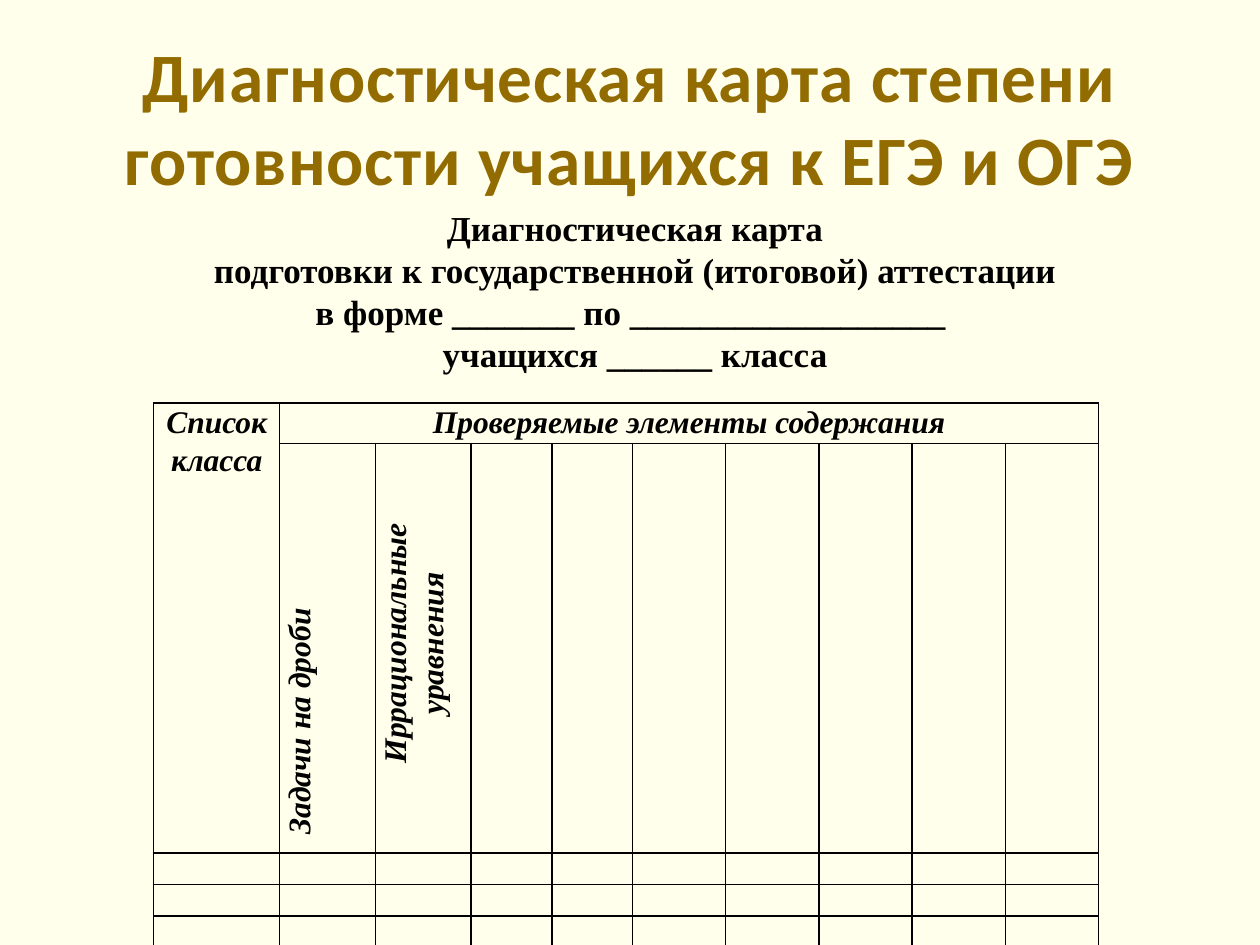
from dataclasses import dataclass

from lxml.etree import SubElement as Sub
from pptx import Presentation
from pptx.dml.color import RGBColor as Rgb
from pptx.enum.text import MSO_ANCHOR as Anchor, PP_ALIGN as Align
from pptx.oxml.ns import qn
from pptx.util import Inches, Pt

HUES = {"back": "FFFFEB", "title": "926C00", "ink": "000000"}
SERIF = "Times New Roman"
COLS = [1, 0.76, 0.76, 0.64, 0.64] + [0.74] * 5
ROWS = [0.32, 3.25] + [0.25] * 3


@dataclass
class Head:
    row: int
    col: int
    text: str
    align: Align = Align.CENTER
    vert: bool = False


HEADS = [
    Head(0, 0, "Список класса"),
    Head(0, 1, "Проверяемые элементы содержания"),
    Head(1, 1, "Задачи на дроби", Align.LEFT, True),
    Head(1, 2, "Иррациональные уравнения", vert=True),
]


def write(frame, text: str, *, size: float, face: str = SERIF,
          hue: str = "ink", italic: bool = False, align: Align = Align.CENTER,
          lead: float = 1.0, track: int = 0, left: float = 0) -> None:
    frame.word_wrap = True
    for i, line in enumerate(text.split("\n")):
        para = frame.paragraphs[0] if i == 0 else frame.add_paragraph()
        para.alignment = align
        para.line_spacing = lead
        if left:
            para._p.get_or_add_pPr().set("marL", str(Inches(left)))
        run = para.add_run()
        run.text = line
        font = run.font
        font.name, font.size = face, Pt(size)
        font.bold, font.italic = True, italic
        font.color.rgb = Rgb.from_string(HUES[hue])
        if track:
            run._r.get_or_add_rPr().set("spc", str(track))


def add_text(slide, box: tuple, text: str, anchor: Anchor, **form) -> None:
    frame = slide.shapes.add_textbox(*map(Inches, box)).text_frame
    frame.vertical_anchor = anchor
    write(frame, text, **form)


def style(cell) -> None:
    cell.margin_left = cell.margin_right = Inches(0.07)
    cell.margin_top = cell.margin_bottom = 0
    cell.text_frame.paragraphs[0].font.size = Pt(12)
    props = cell._tc.get_or_add_tcPr()
    for side in ("lnL", "lnR", "lnT", "lnB"):
        edge = Sub(props, qn(f"a:{side}"), w=str(Pt(1)))
        fill = Sub(edge, qn("a:solidFill"))
        Sub(fill, qn("a:srgbClr"), val=HUES["ink"])
    cell.fill.background()


def add_grid(slide) -> None:
    size = map(Inches, (1.22, 3.2, sum(COLS), sum(ROWS)))
    grid = slide.shapes.add_table(len(ROWS), len(COLS), *size).table
    grid.first_row = grid.horz_banding = False
    for col, width in zip(grid.columns, COLS):
        col.width = Inches(width)
    for row, height in zip(grid.rows, ROWS):
        row.height = Inches(height)
        for cell in row.cells:
            style(cell)
    grid.cell(0, 0).merge(grid.cell(1, 0))
    grid.cell(0, 1).merge(grid.cell(0, len(COLS) - 1))
    for head in HEADS:
        cell = grid.cell(head.row, head.col)
        if head.vert:
            cell._tc.get_or_add_tcPr().set("vert", "vert270")
        write(cell.text_frame, head.text, size=18, italic=True, lead=1.07,
              align=head.align, left=0.08 if head.vert else 0)


def main() -> None:
    deck = Presentation()
    deck.slide_width, deck.slide_height = Inches(10), Inches(7.5)
    slide = deck.slides.add_slide(deck.slide_layouts[6])
    fill = slide.background.fill
    fill.solid()
    fill.fore_color.rgb = Rgb.from_string(HUES["back"])
    add_text(slide, (0.5, 0.3, 9, 1.25),
             "Диагностическая карта степени готовности учащихся к ЕГЭ и ОГЭ",
             Anchor.MIDDLE, size=39.6, face="Calibri", hue="title", track=50)
    add_text(slide, (1.3, 1.59, 7.48, 1.75),
             "Диагностическая карта\n"
             " подготовки к государственной (итоговой) аттестации \n"
             "в форме _______ по __________________ \n"
             "учащихся ______ класса",
             Anchor.TOP, size=20)
    add_grid(slide)
    deck.save("out.pptx")


if __name__ == "__main__":
    main()
